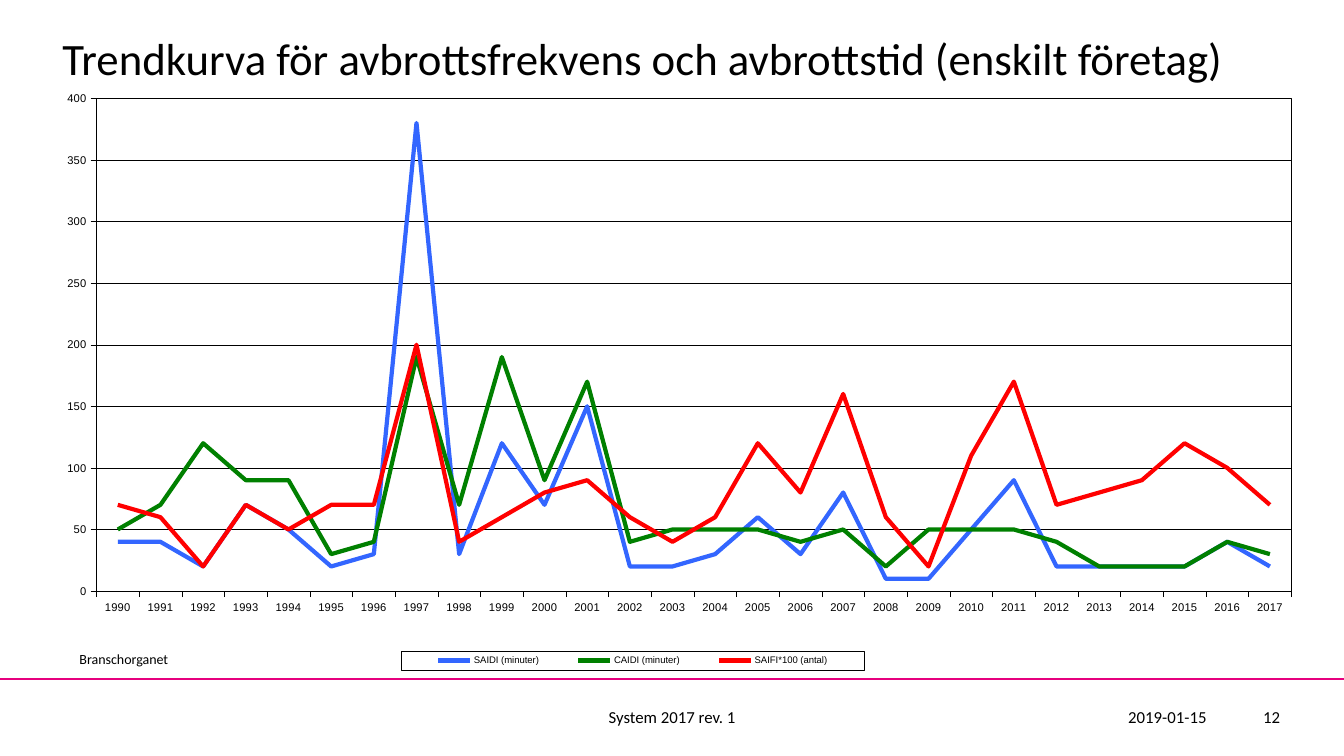
from dataclasses import dataclass

from lxml import etree
from pptx import Presentation
from pptx.chart import data as chart_data
from pptx.dml.color import RGBColor
from pptx.enum import chart as chart_enum, shapes, text
from pptx.oxml import ns, parse_xml
from pptx.util import Pt


@dataclass(frozen=True)
class Theme:
    """Colours, fonts and type sizes of the deck."""
    ink: str = "000000"
    accent: str = "E6007E"
    saidi: str = "3366FF"
    caidi: str = "008000"
    saifi: str = "FF0000"
    text_font: str = "Calibri"
    chart_font: str = "Arial"
    title: float = 32
    footer: float = 12
    source: float = 10
    axis: float = 8
    legend: float = 6.8
    hairline: float = 0.25
    curve: float = 3
    rule: float = 1.5


THEME = Theme()
YEARS = [str(year) for year in range(1990, 2018)]
SERIES = [
    ("SAIDI (minuter)", THEME.saidi,
     [40, 40, 20, 70, 50, 20, 30, 380, 30, 120, 70, 150, 20, 20,
      30, 60, 30, 80, 10, 10, 50, 90, 20, 20, 20, 20, 40, 20]),
    ("CAIDI (minuter)", THEME.caidi,
     [50, 70, 120, 90, 90, 30, 40, 190, 70, 190, 90, 170, 40, 50,
      50, 50, 40, 50, 20, 50, 50, 50, 40, 20, 20, 20, 40, 30]),
    ("SAIFI*100 (antal)", THEME.saifi,
     [70, 60, 20, 70, 50, 70, 70, 200, 40, 60, 80, 90, 60, 40,
      60, 120, 80, 160, 60, 20, 110, 170, 70, 80, 90, 120, 100, 70]),
]


def style_font(font, name, size):
    """Give a font its face, size and ink colour."""
    font.name, font.size, font.bold = name, Pt(size), False
    font.color.rgb = RGBColor.from_string(THEME.ink)


def style_line(line, color, width):
    """Give a line its colour and width."""
    line.color.rgb = RGBColor.from_string(color)
    line.width = Pt(width)


def add_label(page, area, words, size, align="LEFT", anchor="MIDDLE", spacing=1.0):
    """Place one line of text in the given area."""
    box = page.shapes.add_textbox(*map(Pt, area))
    frame = box.text_frame
    frame.word_wrap = True
    frame.vertical_anchor = text.MSO_ANCHOR[anchor]
    frame.text = words
    para = frame.paragraphs[0]
    para.alignment = text.PP_ALIGN[align]
    para.line_spacing = spacing
    style_font(para.runs[0].font, THEME.text_font, size)


def add_footer(page, left, top, width, height):
    """Draw the rule and the footer labels below it."""
    rule = page.shapes.add_connector(
        shapes.MSO_CONNECTOR.STRAIGHT, Pt(left), Pt(top), Pt(left + width), Pt(top))
    style_line(rule.line, THEME.accent, THEME.rule)
    etree.SubElement(rule._element.spPr, ns.qn("a:effectLst"))
    labels = [("2019-01-15", 756, 113, "RIGHT"),
              ("System 2017 rev. 1", 237, 486, "CENTER"),
              ("12", 874, 47.5, "RIGHT")]
    for words, offset, span, align in labels:
        add_label(page, (left + offset, top + 12.7, span, height - 26),
                  words, THEME.footer, align)


def layout_xml(left, top, width, height, inner=False):
    """Return a manual chart layout in fractions of the chart."""
    target = '<c:layoutTarget val="inner"/>' if inner else ""
    return parse_xml(
        f'<c:layout {ns.nsdecls("c")}><c:manualLayout>{target}'
        '<c:xMode val="edge"/><c:yMode val="edge"/>'
        f'<c:x val="{left}"/><c:y val="{top}"/>'
        f'<c:w val="{width}"/><c:h val="{height}"/></c:manualLayout></c:layout>')


def frame_xml():
    """Return unfilled chart shape properties with a thin outline."""
    return parse_xml(
        f'<c:spPr {ns.nsdecls("c", "a")}><a:noFill/>'
        f'<a:ln w="{Pt(THEME.hairline)}"><a:solidFill>'
        f'<a:srgbClr val="{THEME.ink}"/></a:solidFill></a:ln></c:spPr>')


def place_chart_parts(chart):
    """Position and outline the plot area and the legend."""
    plot_area = chart._chartSpace.chart.plotArea
    legend = chart.legend._element
    for part in (plot_area, legend):
        for old in part.findall(ns.qn("c:layout")):
            part.remove(old)
    plot_area.insert(0, layout_xml(0.053, 0.048, 0.929, 0.795, inner=True))
    plot_area.append(frame_xml())
    overlay = legend.find(ns.qn("c:overlay"))
    overlay.addprevious(layout_xml(0.29, 0.94, 0.36, 0.03))
    overlay.addnext(frame_xml())


def add_trend_chart(page, left, top, width, height):
    """Draw the interruption curves in the given area."""
    data = chart_data.CategoryChartData()
    data.categories = YEARS
    for name, _, values in SERIES:
        data.add_series(name, values)
    chart = page.shapes.add_chart(
        chart_enum.XL_CHART_TYPE.LINE, *map(Pt, (left, top, width, height)), data).chart
    chart.has_title = False
    style_font(chart.font, THEME.chart_font, THEME.axis)
    chart.plots[0].vary_by_categories = False
    for series, (_, color, _) in zip(chart.plots[0].series, SERIES):
        series.smooth = False
        series.marker.style = chart_enum.XL_MARKER_STYLE.NONE
        style_line(series.format.line, color, THEME.curve)
    for axis in (chart.category_axis, chart.value_axis):
        axis.major_tick_mark = chart_enum.XL_TICK_MARK.OUTSIDE
        axis.minor_tick_mark = chart_enum.XL_TICK_MARK.NONE
        style_font(axis.tick_labels.font, THEME.chart_font, THEME.axis)
        style_line(axis.format.line, THEME.ink, THEME.hairline)
    scale = chart.value_axis
    scale.minimum_scale, scale.maximum_scale, scale.major_unit = 0, 400, 50
    scale.has_major_gridlines = True
    style_line(scale.major_gridlines.format.line, THEME.ink, THEME.hairline)
    chart.has_legend = True
    chart.legend.position = chart_enum.XL_LEGEND_POSITION.BOTTOM
    chart.legend.include_in_layout = False
    style_font(chart.legend.font, THEME.chart_font, THEME.legend)
    place_chart_parts(chart)


def add_trend_page(deck):
    """Add the page with the title, trend chart, source and footer."""
    page = deck.slides.add_slide(deck.slide_layouts[6])
    add_footer(page, 0, 485.3, 960, 54.7)
    add_label(page, (37.5, 15, 864, 49),
              "Trendkurva för avbrottsfrekvens och avbrottstid (enskilt företag)",
              THEME.title, anchor="BOTTOM", spacing=0.85)
    add_label(page, (49.7, 462.2, 540, 14.4), "Branschorganet",
              THEME.source, anchor="TOP", spacing=0.9)
    add_trend_chart(page, 20.2, 49, 918.7, 442.8)


def main():
    """Build and save the deck."""
    deck = Presentation()
    deck.slide_width, deck.slide_height = Pt(960), Pt(540)
    add_trend_page(deck)
    deck.save("out.pptx")


if __name__ == "__main__":
    main()
